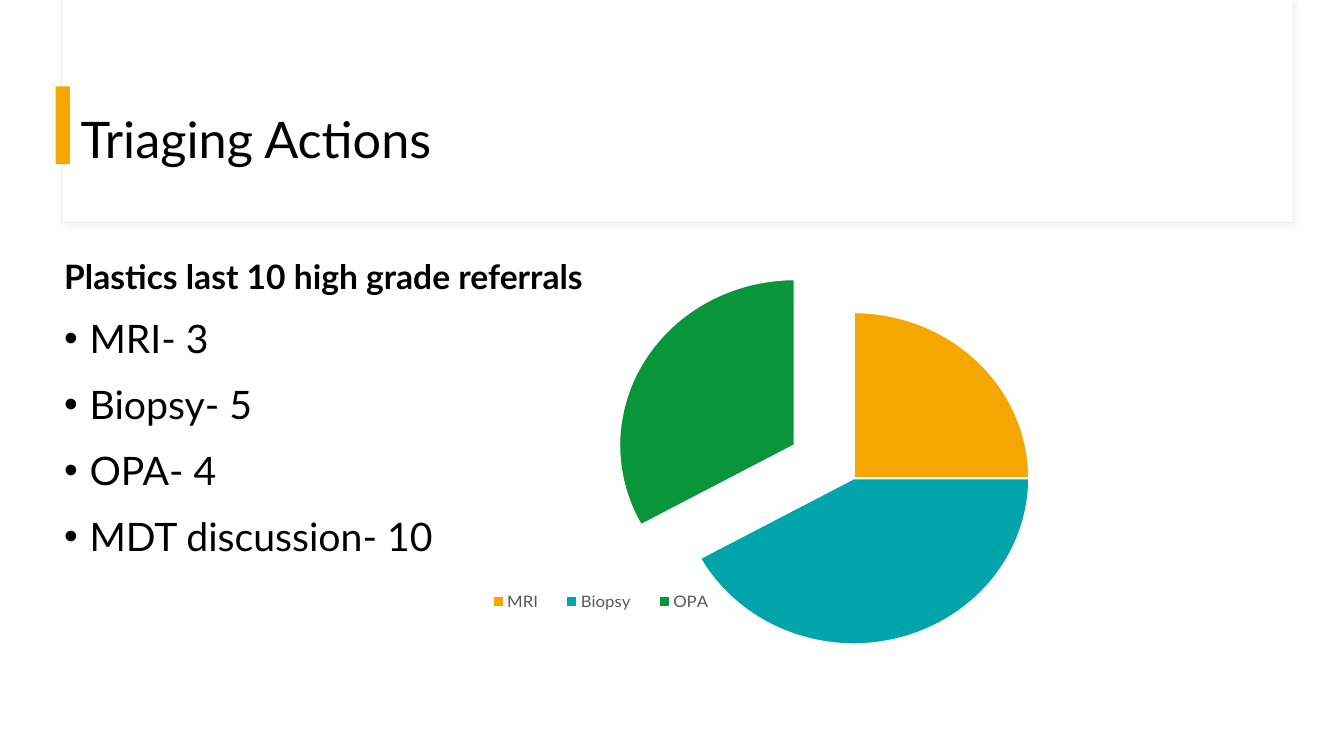
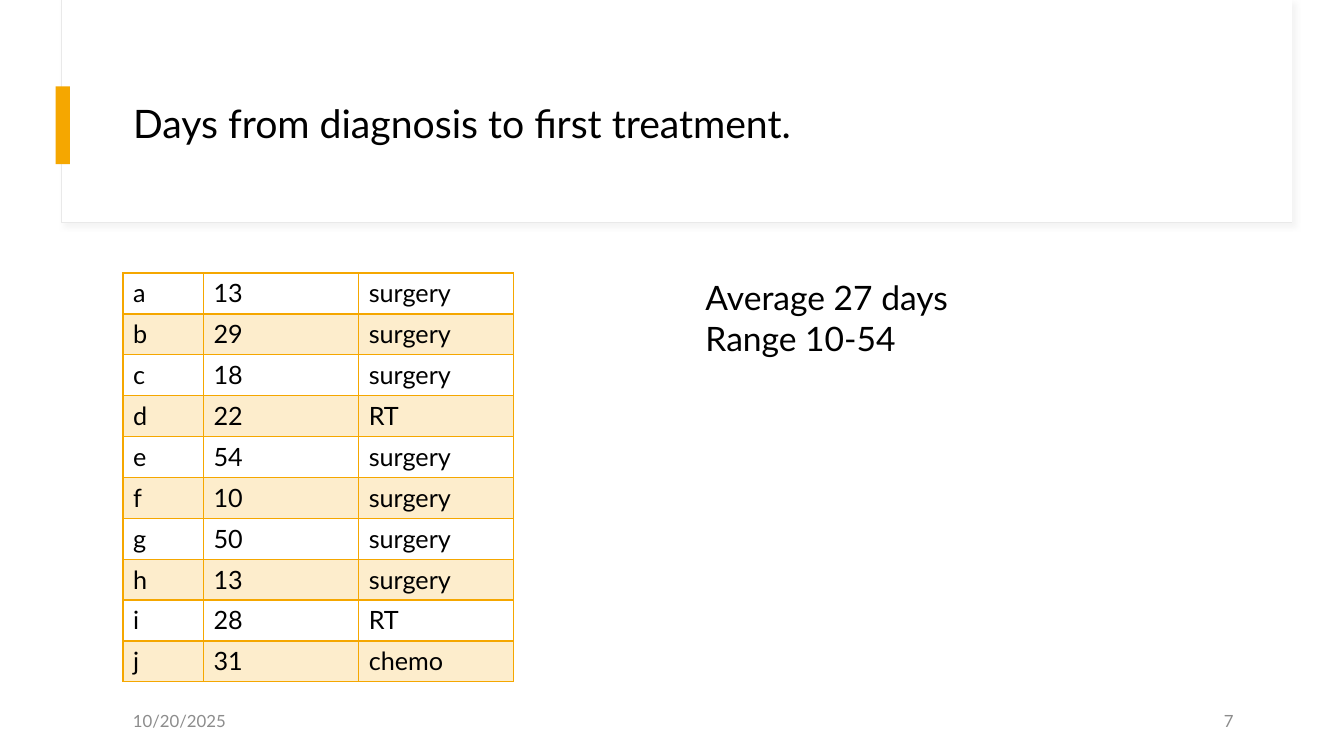
"""Two slides on triage actions and waiting days."""
from dataclasses import dataclass

from lxml import etree
from pptx import Presentation
from pptx import util as u
from pptx.chart import data as chart_data
from pptx.dml import color
from pptx.enum import chart as charts
from pptx.enum import shapes, text
from pptx.oxml import ns


@dataclass(frozen=True)
class Theme:
    """Colours, font and type sizes shared by the slides."""
    font: str = "Lato"
    ink: str = "000000"
    paper: str = "FFFFFF"
    accent: str = "F5A700"
    teal: str = "00A5AB"
    green: str = "09963B"
    frame: str = "E9E9E9"
    shadow: str = "D9D9D9"
    footer: str = "8C8C8C"
    legend: str = "595959"
    title_size: int = 36
    long_title_size: int = 28
    bullet_size: int = 28
    lead_size: int = 24
    table_size: int = 18
    small_size: int = 12


@dataclass(frozen=True)
class Box:
    """A rectangle in centimetres."""
    left: float
    top: float
    width: float
    height: float

    def lengths(self):
        """Return the four sides as slide lengths."""
        return [u.Cm(side) for side in (self.left, self.top, self.width, self.height)]


THEME = Theme()
ACTIONS = [("MRI", 3), ("Biopsy", 5), ("OPA", 4), ("MDT discussion", 10)]
SHARES = [("MRI", 25, THEME.accent), ("Biopsy", 42, THEME.teal), ("OPA", 33, THEME.green)]
TREATMENTS = [
    ("a", "13", "surgery"), ("b", "29", "surgery"), ("c", "18", "surgery"),
    ("d", "22", "RT"), ("e", "54", "surgery"), ("f", "10", "surgery"),
    ("g", "50", "surgery"), ("h", "13", "surgery"), ("i", "28", "RT"),
    ("j", "31", "chemo"),
]


def rgb(code):
    """Turn a hex code into a colour."""
    return color.RGBColor.from_string(code)


def add_xml(parent, tag, **attributes):
    """Append a namespaced element and return it."""
    return etree.SubElement(parent, ns.qn(tag), attributes)


def style_font(font, size, ink=THEME.ink, bold=False):
    """Apply the theme font with a size and a colour."""
    font.name, font.size, font.bold = THEME.font, u.Pt(size), bold
    font.color.rgb = rgb(ink)


def add_run(paragraph, wording, size, ink=THEME.ink, bold=False):
    """Add one styled run to a paragraph."""
    run = paragraph.add_run()
    run.text = wording
    style_font(run.font, size, ink, bold)


def add_text_box(slide, box, anchor=text.MSO_ANCHOR.TOP):
    """Add a wrapping text box and return its text frame."""
    frame = slide.shapes.add_textbox(*box.lengths()).text_frame
    frame.word_wrap, frame.vertical_anchor = True, anchor
    return frame


def add_line(slide, box, wording, size, ink, alignment):
    """Add a single line of text centred vertically in its box."""
    paragraph = add_text_box(slide, box, text.MSO_ANCHOR.MIDDLE).paragraphs[0]
    paragraph.alignment = alignment
    add_run(paragraph, wording, size, ink)


def add_block(slide, box, fill, line=None):
    """Add a plain rectangle."""
    shape = slide.shapes.add_shape(shapes.MSO_SHAPE.RECTANGLE, *box.lengths())
    shape.shadow.inherit = False
    shape.fill.solid()
    shape.fill.fore_color.rgb = rgb(fill)
    if line:
        shape.line.color.rgb = rgb(line)
        shape.line.width = u.Pt(0.75)
    else:
        shape.line.fill.background()
    return shape


def add_shadow(shape):
    """Give a shape a soft shadow to the lower right."""
    effects = shape.element.spPr.find(ns.qn("a:effectLst"))
    shadow = add_xml(effects, "a:outerShdw", blurRad=str(u.Pt(4)),
                     dist=str(u.Pt(3)), dir="2700000", algn="tl")
    tint = add_xml(shadow, "a:srgbClr", val=THEME.shadow)
    add_xml(tint, "a:alpha", val="30000")


def build_header(slide, box):
    """Place the title frame and accent bar on the slide's layout."""
    frame = add_block(slide, box, THEME.paper, THEME.frame)
    add_shadow(frame)
    cover = add_block(slide, Box(box.left + 0.02, box.top, box.width - 0.02,
                                 box.height - 0.02), THEME.paper)
    bar = add_block(slide, Box(box.left - 0.15, box.top + 2.18, 0.36, 1.96), THEME.accent)
    tree = slide.slide_layout.shapes.element
    for position, shape in enumerate((frame, cover, bar), start=2):
        tree.insert(position, shape.element)


def set_title(slide, box, wording, size):
    """Move and format the title placeholder."""
    title = slide.shapes.title
    title.left, title.top, title.width, title.height = box.lengths()
    frame = title.text_frame
    frame.auto_size, frame.word_wrap = text.MSO_AUTO_SIZE.NONE, True
    frame.vertical_anchor = text.MSO_ANCHOR.MIDDLE
    paragraph = frame.paragraphs[0]
    paragraph.alignment, paragraph.line_spacing = text.PP_ALIGN.LEFT, 0.9
    add_run(paragraph, wording, size)


def add_bullet(paragraph):
    """Give a paragraph a hanging round bullet."""
    indent = u.Cm(0.64)
    properties = paragraph._p.get_or_add_pPr()
    properties.set("marL", str(indent))
    properties.set("indent", str(-indent))
    add_xml(properties, "a:buFont", typeface="Arial")
    add_xml(properties, "a:buChar", char="•")


def build_actions(slide, box):
    """List the referral actions under a bold lead."""
    frame = add_text_box(slide, box)
    lead = frame.paragraphs[0]
    add_run(lead, "Plastics last 10 high grade referrals", THEME.lead_size, bold=True)
    for action, count in ACTIONS:
        add_run(frame.add_paragraph(), f"{action}- {count}", THEME.bullet_size)
    for paragraph in frame.paragraphs:
        paragraph.line_spacing, paragraph.space_before = 1.1, u.Pt(10)
        if paragraph.text != lead.text:
            add_bullet(paragraph)


def set_layout(element, position, inner=False):
    """Fix a chart part at fractions of the chart area."""
    layout = element.find(ns.qn("c:layout"))
    if layout is None:
        layout = etree.Element(ns.qn("c:layout"))
        if inner:
            element.insert(0, layout)
        else:
            element.find(ns.qn("c:legendPos")).addnext(layout)
    manual = add_xml(layout, "c:manualLayout")
    if inner:
        add_xml(manual, "c:layoutTarget", val="inner")
    for tag in ("c:xMode", "c:yMode"):
        add_xml(manual, tag, val="edge")
    for tag, value in zip("xywh", position):
        add_xml(manual, f"c:{tag}", val=str(value))


def build_pie(slide, box):
    """Draw the pie of actions with the last slice pulled out."""
    data = chart_data.CategoryChartData()
    data.categories = [name for name, _, _ in SHARES]
    data.add_series("Series 1", [share for _, share, _ in SHARES])
    chart = slide.shapes.add_chart(charts.XL_CHART_TYPE.PIE, *box.lengths(), data).chart
    style_font(chart.font, 10)
    chart.has_title = False
    chart.has_legend = True
    chart.legend.position = charts.XL_LEGEND_POSITION.BOTTOM
    chart.legend.include_in_layout = False
    style_font(chart.legend.font, THEME.small_size, THEME.legend)
    plot = chart.plots[0]
    plot.vary_by_categories = True
    series = plot.series[0]
    for index, (_, _, fill) in enumerate(SHARES):
        style = series.points[index].format
        style.fill.solid()
        style.fill.fore_color.rgb = rgb(fill)
        style.line.color.rgb = rgb(THEME.paper)
        style.line.width = u.Pt(1.5)
    pulled = series._element.findall(ns.qn("c:dPt"))[-1]
    explosion = etree.Element(ns.qn("c:explosion"), val="39")
    pulled.find(ns.qn("c:spPr")).addprevious(explosion)
    area = chart._chartSpace.chart.plotArea
    set_layout(area, (0.28, 0.03, 0.44, 0.85), inner=True)
    set_layout(chart.legend._element, (0.03, 0.73, 0.32, 0.08))


def set_borders(cell, bottom):
    """Draw the four accent borders of a cell."""
    properties = cell._tc.get_or_add_tcPr()
    widths = {"a:lnL": 1, "a:lnR": 1, "a:lnT": 1, "a:lnB": bottom}
    for position, (tag, width) in enumerate(widths.items()):
        line = etree.Element(ns.qn(tag), w=str(u.Pt(width)))
        add_xml(add_xml(line, "a:solidFill"), "a:srgbClr", val=THEME.accent)
        properties.insert(position, line)


def fill_cell(cell, shaded):
    """Tint a shaded cell and leave any other clear."""
    if not shaded:
        cell.fill.background()
        return
    cell.fill.solid()
    cell.fill.fore_color.rgb = rgb(THEME.accent)
    tint = cell._tc.tcPr.find(ns.qn("a:solidFill")).find(ns.qn("a:srgbClr"))
    add_xml(tint, "a:alpha", val="20000")


def build_table(slide, box):
    """Tabulate days and first treatment for each patient."""
    widths = (2.03, 3.91, 3.91)
    table = slide.shapes.add_table(len(TREATMENTS), len(widths), *box.lengths()).table
    table.first_row = table.horz_banding = False
    for column, width in zip(table.columns, widths):
        column.width = u.Cm(width)
    for row_index, values in enumerate(TREATMENTS):
        for column_index, value in enumerate(values):
            cell = table.cell(row_index, column_index)
            add_run(cell.text_frame.paragraphs[0], value, THEME.table_size)
            fill_cell(cell, row_index % 2 == 1)
            set_borders(cell, 1 if row_index else 2)


def build_summary(slide, box):
    """State the average and the range."""
    frame = add_text_box(slide, box)
    add_run(frame.paragraphs[0], "Average 27 days", THEME.lead_size)
    add_run(frame.add_paragraph(), "Range 10-54", THEME.lead_size)


def build_footer(slide, box, date, number):
    """Place the date at the left and the number at the right of a band."""
    width = 7.62
    right = Box(box.left + box.width - width, box.top, width, box.height)
    left = Box(box.left, box.top, width, box.height)
    add_line(slide, left, date, THEME.small_size, THEME.footer, text.PP_ALIGN.LEFT)
    add_line(slide, right, number, THEME.small_size, THEME.footer, text.PP_ALIGN.RIGHT)


def build_triage_slide(slide):
    """Compose the slide of triaging actions."""
    set_title(slide, Box(1.78, 2.36, 18.9, 2.44), "Triaging Actions", THEME.title_size)
    build_actions(slide, Box(1.37, 6.22, 14.81, 12.37))
    build_pie(slide, Box(11.23, 7.01, 20.57, 10.41))


def build_days_slide(slide):
    """Compose the slide of days to first treatment."""
    set_title(slide, Box(3.1, 1.52, 28.24, 3.28),
              "Days from diagnosis to first treatment.", THEME.long_title_size)
    build_table(slide, Box(3.1, 6.88, 9.85, 10.3))
    build_footer(slide, Box(3.1, 17.65, 28.24, 1.02), "10/20/2025", "7")
    build_summary(slide, Box(17.53, 6.86, 13.16, 3.33))


def main():
    """Build and save the presentation."""
    presentation = Presentation()
    presentation.slide_width, presentation.slide_height = u.Cm(33.87), u.Cm(19.05)
    layout = presentation.slide_layouts[5]
    slides = [presentation.slides.add_slide(layout) for _ in range(2)]
    build_header(slides[0], Box(1.55, 0, 31.01, 5.61))
    build_triage_slide(slides[0])
    build_days_slide(slides[1])
    presentation.save("out.pptx")


if __name__ == "__main__":
    main()
